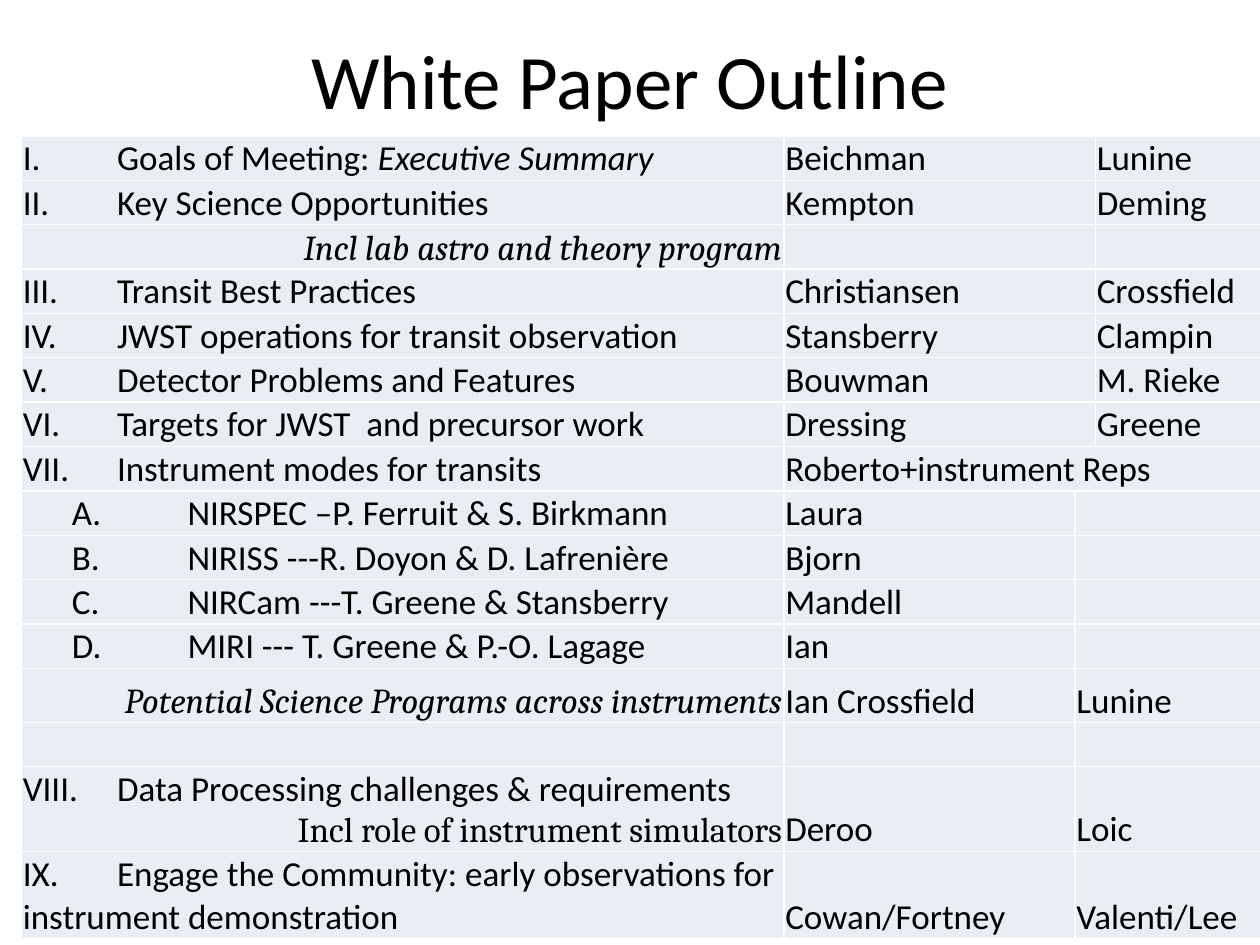
from dataclasses import dataclass
from enum import Enum

from lxml import etree
from pptx import Presentation
from pptx.dml.color import RGBColor
from pptx.enum import text
from pptx.oxml import ns
from pptx.table import Table, _Cell
from pptx.text.text import _Paragraph
from pptx.util import Cm, Pt


@dataclass(frozen=True)
class Theme:
    ink: RGBColor = RGBColor(0x00, 0x00, 0x00)
    band: RGBColor = RGBColor(0xE9, 0xED, 0xF4)
    rule: str = "FFFFFF"
    sans: str = "Calibri"
    serif: str = "Cambria"
    title_size: Pt = Pt(44)
    body_size: Pt = Pt(20)
    rule_width: Pt = Pt(1)


class Names(Enum):
    WIDE_LEAD = ((1, 2),)
    ONE_GROUP = ((1, 3),)
    WIDE_PARTNER = ((2, 3),)


@dataclass(frozen=True)
class Entry:
    mark: str = ""
    topic: str = ""
    lead: str = ""
    partner: str = ""
    names: Names = Names.WIDE_LEAD
    accent: str = ""
    note: str = ""
    note_italic: bool = True
    nested: bool = False
    height: float = 0.89


THEME = Theme()
COLUMN_WIDTHS = (15.37, 5.87, 0.41, 3.33)
INSET = Cm(0.03)
NESTED_INSET = Cm(1.02)
TOPIC_TAB = Cm(1.9)
NESTED_TAB = Cm(2.33)


def instrument(mark: str, topic: str, lead: str) -> Entry:
    return Entry(mark, topic, lead, names=Names.WIDE_PARTNER, nested=True)


OUTLINE = (
    Entry("I.", "Goals of Meeting: ", "Beichman", "Lunine", accent="Executive Summary"),
    Entry("II.", "Key Science Opportunities", "Kempton", "Deming"),
    Entry(note="Incl lab astro and theory program"),
    Entry("III.", "Transit Best Practices", "Christiansen", "Crossfield"),
    Entry("IV.", "JWST operations for transit observation", "Stansberry", "Clampin"),
    Entry("V.", "Detector Problems and Features", "Bouwman", "M. Rieke"),
    Entry("VI.", "Targets for JWST  and precursor work", "Dressing", "Greene"),
    Entry("VII.", "Instrument modes for transits", "Roberto+instrument Reps",
          names=Names.ONE_GROUP),
    instrument("A.", "NIRSPEC –P. Ferruit & S. Birkmann", "Laura"),
    instrument("B.", "NIRISS ---R. Doyon & D. Lafrenière", "Bjorn"),
    instrument("C.", "NIRCam ---T. Greene & Stansberry", "Mandell"),
    instrument("D.", "MIRI --- T. Greene & P.-O. Lagage", "Ian"),
    Entry(note="Potential Science Programs across instruments",
          lead="Ian Crossfield", partner="Lunine", names=Names.WIDE_PARTNER, height=1.09),
    Entry(names=Names.WIDE_PARTNER),
    Entry("VIII.", "Data Processing challenges & requirements", "Deroo", "Loic",
          names=Names.WIDE_PARTNER, note="Incl role of instrument simulators",
          note_italic=False, height=1.7),
    Entry("IX.", "Engage the Community: early observations for instrument demonstration",
          "Cowan/Fortney", "Valenti/Lee", names=Names.WIDE_PARTNER, height=1.75),
)


def format_runs(paragraph: _Paragraph, family: str, size: Pt, italic: bool = False) -> None:
    for span in paragraph.runs:
        span.font.name = family
        span.font.size = size
        span.font.italic = italic
        span.font.color.rgb = THEME.ink


def add_tab(paragraph: _Paragraph, position: int) -> None:
    properties = paragraph._p.get_or_add_pPr()
    stops = etree.SubElement(properties, ns.qn("a:tabLst"))
    etree.SubElement(stops, ns.qn("a:tab"), pos=str(int(position)), algn="l")


def style_cell(cell: _Cell) -> None:
    cell.margin_left = cell.margin_right = cell.margin_top = INSET
    cell.margin_bottom = 0
    cell.vertical_anchor = text.MSO_ANCHOR.BOTTOM
    properties = cell._tc.get_or_add_tcPr()
    for side in ("lnL", "lnR", "lnT", "lnB"):
        line = etree.SubElement(properties, ns.qn(f"a:{side}"), w=str(int(THEME.rule_width)))
        fill = etree.SubElement(line, ns.qn("a:solidFill"))
        etree.SubElement(fill, ns.qn("a:srgbClr"), val=THEME.rule)
    cell.fill.solid()
    cell.fill.fore_color.rgb = THEME.band


def write_name(cell: _Cell, name: str) -> None:
    if name:
        cell.text_frame.text = name
        format_runs(cell.text_frame.paragraphs[0], THEME.sans, THEME.body_size)


def write_topic(cell: _Cell, entry: Entry) -> None:
    frame = cell.text_frame
    paragraph = frame.paragraphs[0]
    if entry.nested:
        cell.margin_left = NESTED_INSET
    if entry.mark:
        add_tab(paragraph, NESTED_TAB if entry.nested else TOPIC_TAB)
        paragraph.text = f"{entry.mark}\t{entry.topic}"
        format_runs(paragraph, THEME.sans, THEME.body_size)
    if entry.accent:
        accent = paragraph.add_run()
        accent.text = entry.accent
        format_runs(paragraph, THEME.sans, THEME.body_size)
        accent.font.italic = True
    if entry.note:
        note = frame.add_paragraph() if entry.mark else paragraph
        note.text = entry.note
        note.alignment = text.PP_ALIGN.RIGHT
        format_runs(note, THEME.serif, THEME.body_size, entry.note_italic)


def write_entry(table: Table, row: int, entry: Entry) -> None:
    table.rows[row].height = Cm(entry.height)
    for column in range(len(COLUMN_WIDTHS)):
        style_cell(table.cell(row, column))
    for first, last in entry.names.value:
        table.cell(row, first).merge(table.cell(row, last))
    write_topic(table.cell(row, 0), entry)
    write_name(table.cell(row, 1), entry.lead)
    partner_column = 2 if entry.names is Names.WIDE_PARTNER else 3
    write_name(table.cell(row, partner_column), entry.partner)


def main() -> None:
    deck = Presentation()
    deck.slide_width, deck.slide_height = Cm(25.4), Cm(19.05)
    page = deck.slides.add_slide(deck.slide_layouts[5])

    title = page.shapes.title
    title.left, title.top, title.width, title.height = Cm(1.27), 0, Cm(22.86), Cm(3.18)
    title.text_frame.text = "White Paper Outline"
    title.text_frame.vertical_anchor = text.MSO_ANCHOR.MIDDLE
    heading = title.text_frame.paragraphs[0]
    heading.alignment = text.PP_ALIGN.CENTER
    format_runs(heading, THEME.sans, THEME.title_size)

    height = Cm(sum(entry.height for entry in OUTLINE))
    table = page.shapes.add_table(
        len(OUTLINE), len(COLUMN_WIDTHS), Cm(0.43), Cm(2.74), Cm(sum(COLUMN_WIDTHS)), height
    ).table
    table.first_row = table.horz_banding = False
    for column, width in zip(table.columns, COLUMN_WIDTHS):
        column.width = Cm(width)
    for row, entry in enumerate(OUTLINE):
        write_entry(table, row, entry)

    deck.save("out.pptx")


if __name__ == "__main__":
    main()
